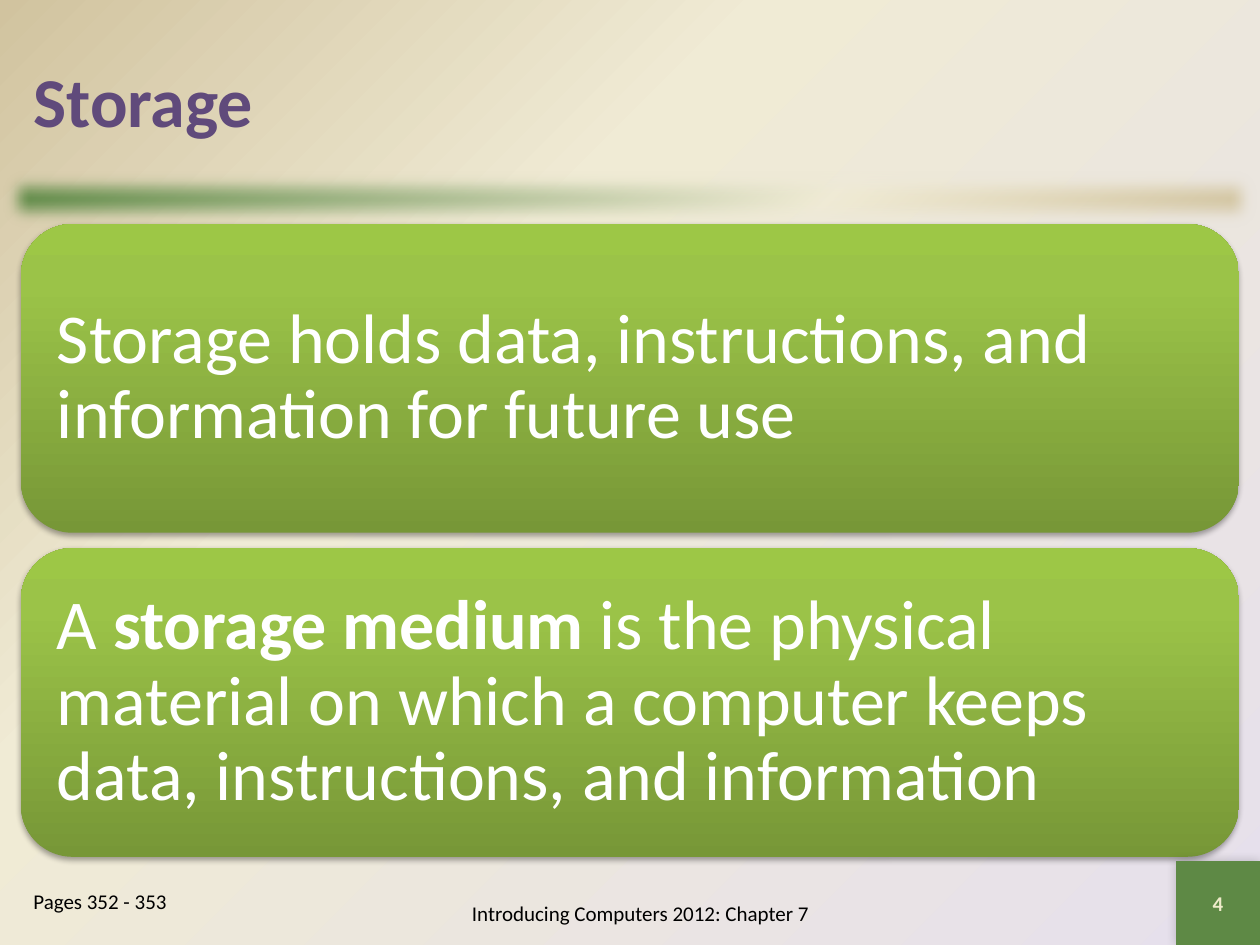
from dataclasses import dataclass

from lxml.etree import SubElement
from pptx import Presentation
from pptx.dml.color import RGBColor
from pptx.enum.shapes import MSO_SHAPE
from pptx.enum.text import MSO_ANCHOR, PP_ALIGN
from pptx.oxml.ns import qn
from pptx.oxml.xmlchemy import OxmlElement
from pptx.util import Pt


@dataclass(frozen=True)
class Theme:
    font: str = "Calibri"
    large: int = 40
    small: int = 12
    purple: str = "604A7B"
    green: str = "5E8945"
    cream: str = "EEEBCA"
    white: str = "FFFFFF"
    black: str = "000000"
    backdrop: tuple = ((0, "E6E0EC"), (65, "F0EBD5"), (100, "D1C39F"))
    rule: tuple = ((0, "5E8945"), (65, "F0EBD5"), (100, "D1C39F"))
    card: tuple = ((0, "779737"), (80, "9BC348"), (100, "9DC746"))


THEME = Theme()


def set_gradient(fill, parent, stops, angle=None):
    """Gradient at a clockwise angle, or around the lower right corner."""
    fill.solid()
    grad = OxmlElement("a:gradFill")
    grad.set("rotWithShape", "1")
    stop_list = SubElement(grad, qn("a:gsLst"))
    for position, color in stops:
        stop = SubElement(stop_list, qn("a:gs"), pos=str(position * 1000))
        SubElement(stop, qn("a:srgbClr"), val=color)
    if angle is None:
        path = SubElement(grad, qn("a:path"), path="circle")
        SubElement(path, qn("a:fillToRect"), l="100000", t="100000")
    else:
        SubElement(grad, qn("a:lin"), ang=str(angle * 60000), scaled="0")
    parent.replace(parent.find(qn("a:solidFill")), grad)


def add_effect(sp, name, **attributes):
    effects = sp.element.spPr.find(qn("a:effectLst"))
    values = {key: str(value) for key, value in attributes.items()}
    return SubElement(effects, qn(name), **values)


def add_shadow(sp, alpha, blur, distance, angle):
    shadow = add_effect(sp, "a:outerShdw", blurRad=Pt(blur), dist=Pt(distance),
                        dir=angle * 60000, algn="ctr", rotWithShape=0)
    color = SubElement(shadow, qn("a:srgbClr"), val=THEME.black)
    SubElement(color, qn("a:alpha"), val=str(alpha * 1000))


def add_block(s, kind, box):
    sp = s.shapes.add_shape(kind, *map(Pt, box))
    sp.shadow.inherit = False
    sp.line.fill.background()
    return sp


def write(sp, runs, size, color, align=PP_ALIGN.LEFT, anchor=MSO_ANCHOR.MIDDLE):
    """Write one paragraph of (text, bold) runs."""
    tf = sp.text_frame
    tf.word_wrap = True
    tf.vertical_anchor = anchor
    p = tf.paragraphs[0]
    p.alignment = align
    for text, bold in runs:
        r = p.add_run()
        r.text = text
        r.font.name = THEME.font
        r.font.size = Pt(size)
        r.font.bold = bold
        r.font.color.rgb = RGBColor.from_string(color)
    return p


def add_label(s, box, runs, size, color, **layout):
    sp = s.shapes.add_textbox(*map(Pt, box))
    return write(sp, runs, size, color, **layout)


def add_header(s, box):
    left, top, width, height = box
    # Soft rule under the title
    rule = add_block(s, MSO_SHAPE.RECTANGLE, (0, top + height - 6, width + 2 * left, 36))
    set_gradient(rule.fill, rule.element.spPr, THEME.rule, 45)
    add_effect(rule, "a:softEdge", rad=Pt(10))
    add_label(s, box, [("Storage", True)], THEME.large, THEME.purple)


def add_cards(s, box, cards, gap):
    left, top, width, height = box
    card_height = (height - gap * (len(cards) - 1)) / len(cards)
    for i, runs in enumerate(cards):
        card_top = top + i * (card_height + gap)
        sp = add_block(s, MSO_SHAPE.ROUNDED_RECTANGLE, (left, card_top, width, card_height))
        set_gradient(sp.fill, sp.element.spPr, THEME.card, 270)
        add_shadow(sp, 35, 3.1, 1.8, 90)
        p = write(sp, runs, THEME.large, THEME.white)
        p.line_spacing = 0.9
        # The rounded outline adds its own inset to these margins
        sp.text_frame.margin_left = sp.text_frame.margin_right = Pt(12)


def add_footer(s, box):
    left, top, width, height = box
    # Page number tab
    tab = add_block(s, MSO_SHAPE.RECTANGLE, (left + width - height, top, height, height))
    tab.fill.solid()
    tab.fill.fore_color.rgb = RGBColor.from_string(THEME.green)
    add_shadow(tab, 20, 6, 0, 225)
    write(tab, [("4", True)], THEME.small, THEME.cream, PP_ALIGN.CENTER)
    # Chapter and page references
    add_label(s, (left + 216, top + 12, 300, 36),
              [("Introducing Computers 2012: Chapter 7", False)],
              THEME.small, THEME.black, align=PP_ALIGN.CENTER)
    pages = add_label(s, (left + 12, top + 12, 132, 36), [("Pages 352 - 353", False)],
                      THEME.small, THEME.black, anchor=MSO_ANCHOR.TOP)
    pages.space_before = Pt(2.4)


def main():
    prs = Presentation()
    prs.slide_width, prs.slide_height = Pt(720), Pt(540)
    s = prs.slides.add_slide(prs.slide_layouts[6])

    # Background
    fill = s.background.fill
    fill.solid()
    set_gradient(fill, next(s.element.iter(qn("p:bgPr"))), THEME.backdrop)

    add_header(s, (12, 12, 696, 90))
    add_cards(s, (12, 128, 696, 361.6), [
        [("Storage holds data, instructions, and information for future use", False)],
        [("A ", False), ("storage medium", True),
         (" is the physical material on which a computer keeps data, "
          "instructions, and information", False)],
    ], gap=8.8)
    add_footer(s, (0, 492, 720, 48))
    prs.save("out.pptx")


if __name__ == "__main__":
    main()
